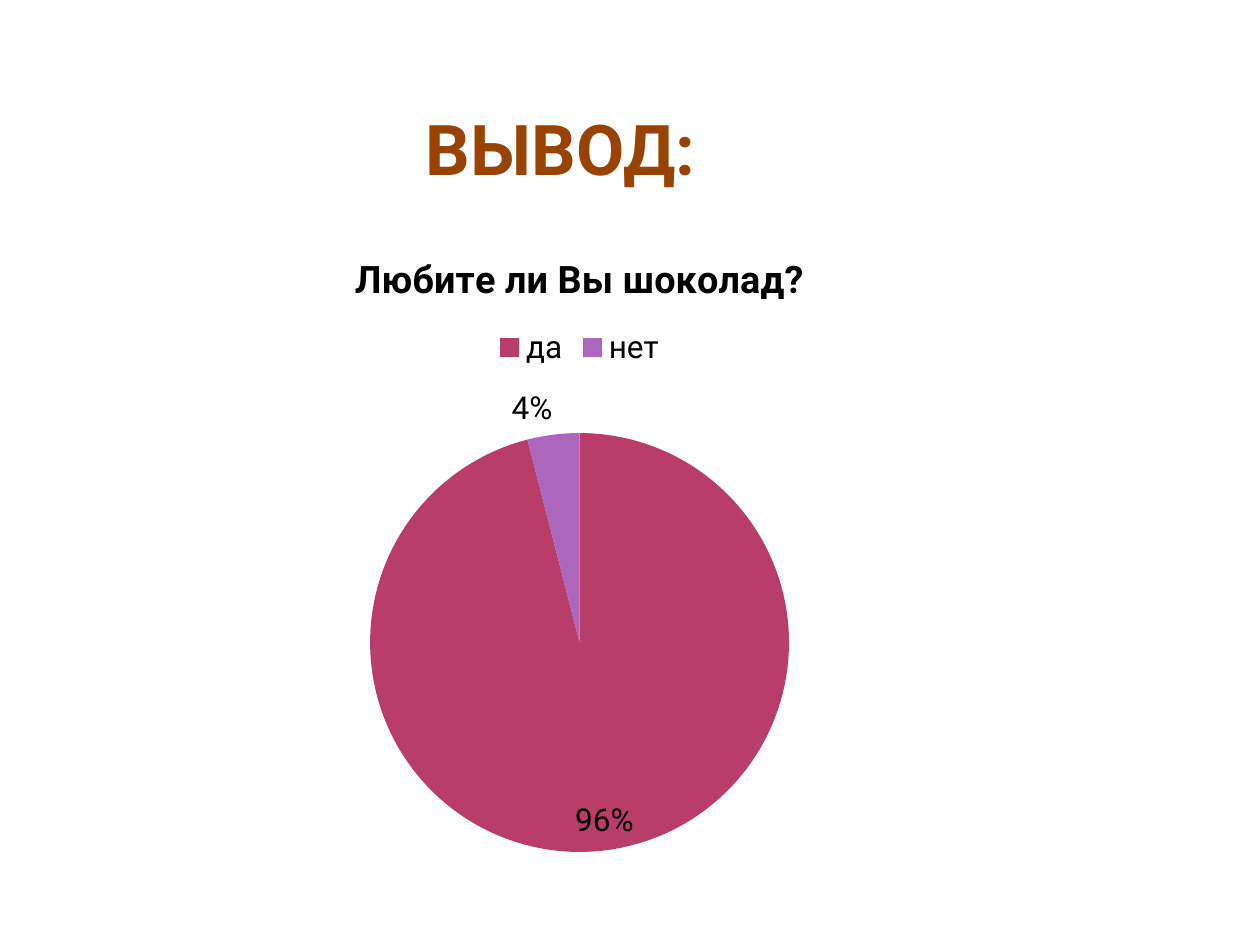
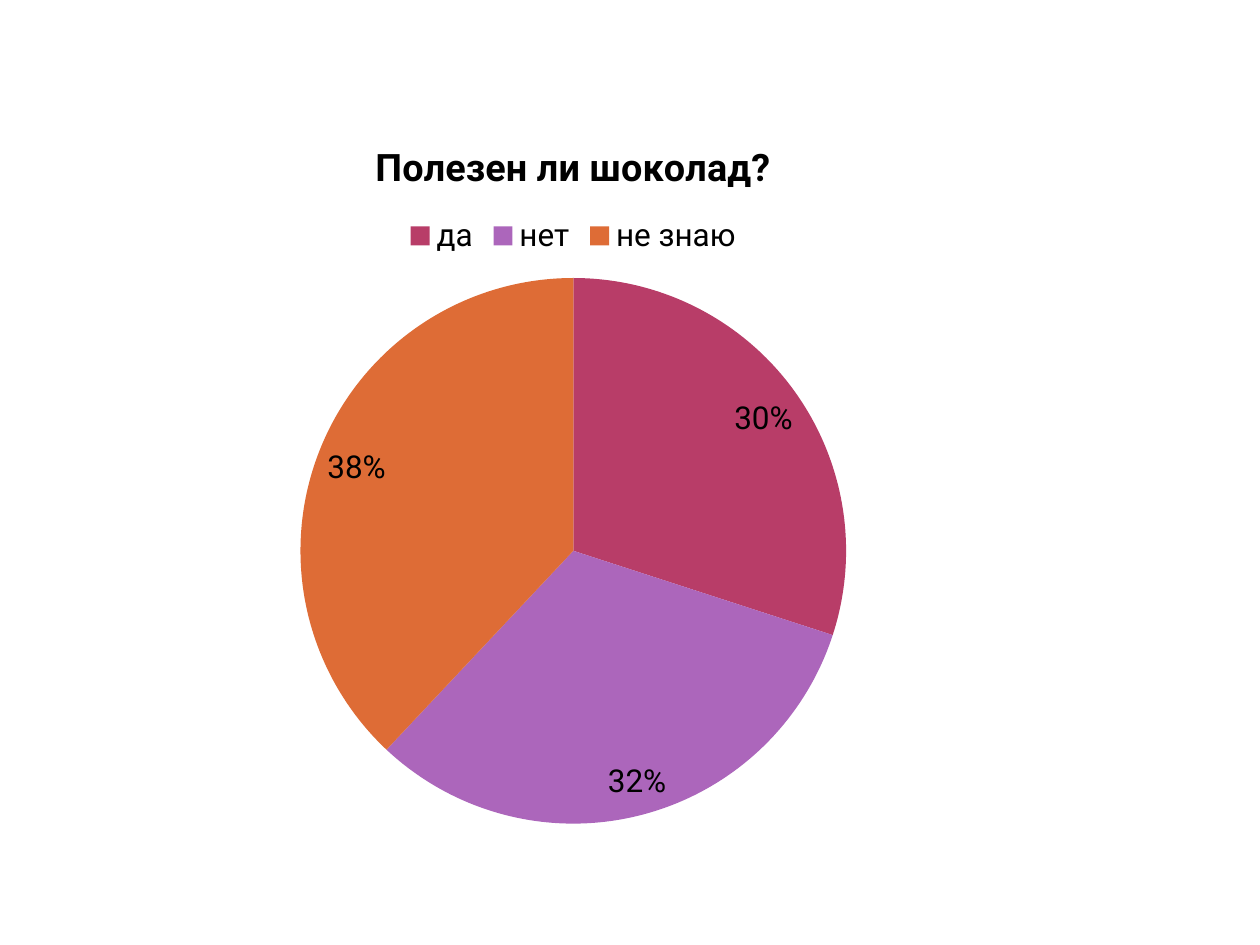
import pptx
import pptx.chart.data
import pptx.dml.color
import pptx.enum.chart
import pptx.enum.text
import pptx.oxml
import pptx.oxml.ns
import pptx.util

FONT = "Roboto"
TITLE_COLOR = "984204"
TITLE_OUTLINE = "5E1A50"
TEXT_COLOR = "000000"
BACKGROUND = "FFFFFF"
ANSWER_COLORS = ["B83D68", "AC66BB", "DE6C36"]  # yes, no, don't know


def color(hex_string):
    return pptx.dml.color.RGBColor.from_string(hex_string)


class Deck:
    """Holds the shared style and the current slide; lengths are shares of the slide."""

    def __init__(self, width, height):
        self.presentation = pptx.Presentation()
        self.presentation.slide_width = pptx.util.Inches(width)
        self.presentation.slide_height = pptx.util.Inches(height)
        self.slide = None

    def new_slide(self):
        self.slide = self.presentation.slides.add_slide(self.presentation.slide_layouts[6])
        fill = self.slide.background.fill
        fill.solid()
        fill.fore_color.rgb = color(BACKGROUND)

    def area(self, left, top, width, height):
        across, down = self.presentation.slide_width, self.presentation.slide_height
        return int(left * across), int(top * down), int(width * across), int(height * down)

    def style(self, font, size, hex_string, bold=False):
        font.name = FONT
        font.size = pptx.util.Pt(size)
        font.bold = bold
        font.color.rgb = color(hex_string)

    def title(self, text, *shares):
        frame = self.slide.shapes.add_textbox(*self.area(*shares)).text_frame
        frame.word_wrap = True
        frame.vertical_anchor = pptx.enum.text.MSO_ANCHOR.BOTTOM
        frame.margin_left = frame.margin_right = pptx.util.Inches(0.05)
        frame.margin_top = frame.margin_bottom = 0
        paragraph = frame.paragraphs[0]
        paragraph.alignment = pptx.enum.text.PP_ALIGN.CENTER
        run = paragraph.add_run()
        run.text = text
        self.style(run.font, 40, TITLE_COLOR, bold=True)
        # Hairline outline around the letters
        outline = pptx.oxml.parse_xml(
            f'<a:ln {pptx.oxml.ns.nsdecls("a")} w="{pptx.util.Pt(0.04)}">'
            f'<a:solidFill><a:srgbClr val="{TITLE_OUTLINE}"/></a:solidFill></a:ln>')
        run.font._element.insert(0, outline)

    def pie(self, question, answers, *shares):
        data = pptx.chart.data.CategoryChartData()
        data.categories = list(answers)
        data.add_series(question, list(answers.values()))
        chart = self.slide.shapes.add_chart(
            pptx.enum.chart.XL_CHART_TYPE.PIE, *self.area(*shares), data).chart
        self.style(chart.font, 18, TEXT_COLOR)

        # Question above the legend
        chart.has_title = True
        run = chart.chart_title.text_frame.paragraphs[0].add_run()
        run.text = question
        self.style(run.font, 21.6, TEXT_COLOR, bold=True)
        chart.has_legend = True
        chart.legend.position = pptx.enum.chart.XL_LEGEND_POSITION.TOP
        chart.legend.include_in_layout = False
        self.style(chart.legend.font, 18, TEXT_COLOR)

        # Slices and their percentages
        plot = chart.plots[0]
        plot.vary_by_categories = True
        for index, hex_string in enumerate(ANSWER_COLORS[:len(answers)]):
            fill = plot.series[0].points[index].format.fill
            fill.solid()
            fill.fore_color.rgb = color(hex_string)
        plot.has_data_labels = True
        labels = plot.data_labels
        labels.show_percentage = True
        labels.show_value = False
        labels.number_format = "0%"
        labels.number_format_is_linked = False
        labels.position = pptx.enum.chart.XL_LABEL_POSITION.BEST_FIT
        self.style(labels.font, 18, TEXT_COLOR)


def main():
    deck = Deck(10, 7.5)

    # Conclusion: who likes chocolate
    deck.new_slide()
    deck.title("ВЫВОД:", 0.05, 0.05, 0.79, 0.15)
    deck.pie("Любите ли Вы шоколад?", {"да": 96, "нет": 4}, 0.03, 0.24, 0.86, 0.68)

    # Is chocolate healthy
    deck.new_slide()
    deck.pie("Полезен ли шоколад?", {"да": 30, "нет": 32, "не знаю": 38},
             0.02, 0.12, 0.87, 0.77)

    deck.presentation.save("out.pptx")


if __name__ == "__main__":
    main()
